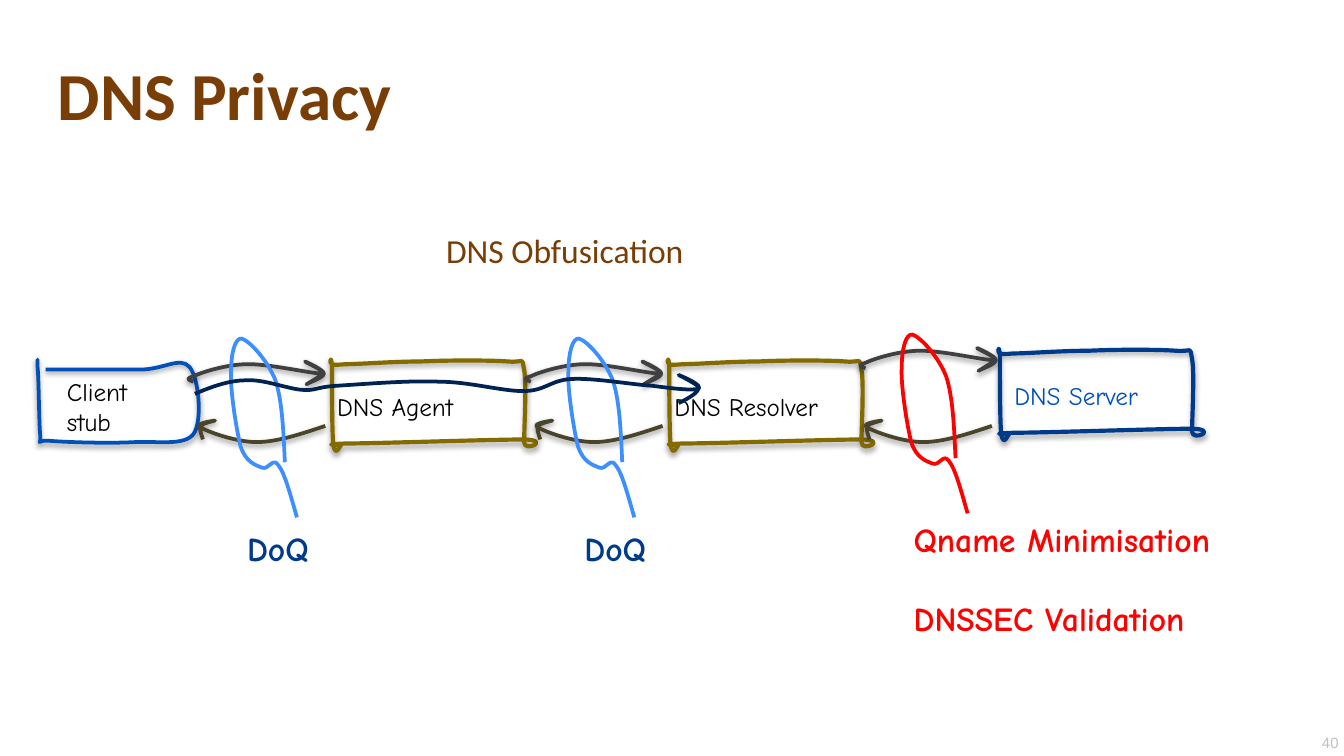
import pptx
import pptx.dml.color
import pptx.enum.text
import pptx.oxml.ns
import pptx.util
from lxml import etree

PX = 9144
COLORS = {
    "brown": "793E05", "grey": "BFBFBF", "black": "000000", "red": "FF0000",
    "blue": "004FBA", "navy": "003B8B", "sky": "3D8FFF", "midnight": "002352",
    "olive": "846B00", "request": "404040", "reply": "4A452A",
}
HAND, PLAIN, SMALL = "Comic Neue", "Calibri", "Arial"
ANCHOR = pptx.enum.text.MSO_ANCHOR
ALIGN = pptx.enum.text.PP_ALIGN

CLIENT = [
    (6, 8), (29, 8), (53, 8), (76, 8), (94, 8), (106, -2), (113, 6),
    (120, 14), (123, 46), (116, 56), (109, 65), (89, 61), (71, 62),
    (53, 63), (20, 62), (9, 61), (-3, 60), (3, 66), (2, 57),
    (1, 47), (1, 15), (0, 6), (0, -3), (0, 2), (0, 2),
]
HOST = [
    (11, 4), (22, 4), (46, 2), (67, 2), (87, 1), (119, 1), (132, 2),
    (145, 3), (142, -2), (144, 8), (146, 18), (144, 53), (144, 62),
    (144, 70), (165, 60), (143, 60), (121, 60), (33, 63), (11, 63),
    (-12, 64), (10, 64), (8, 64), (7, 64), (4, 74), (2, 64),
    (1, 54), (1, 15), (1, 5), (0, -5), (-1, 4), (1, 4),
    (3, 4), (0, 5), (11, 4),
]
REQUEST = [
    (4, 15), (1, 14), (-3, 13), (4, 11), (10, 8), (29, 2), (45, 2),
    (61, 2), (92, 9), (99, 9), (106, 9), (86, 0), (87, 0),
    (87, 0), (101, 6), (101, 9), (101, 12), (89, 16), (88, 17),
    (88, 17), (93, 14), (98, 11),
]
REPLY = [
    (94, 4), (76, 10), (58, 16), (43, 16), (27, 16), (6, 8), (1, 5),
    (-4, 2), (12, 0), (12, 0), (12, 0), (3, 2), (1, 4),
    (0, 6), (3, 14), (3, 14),
]
RING = [
    (49, 133), (44, 116), (40, 100), (35, 94), (31, 88), (28, 98), (23, 96),
    (18, 94), (11, 92), (7, 80), (4, 68), (-1, 37), (0, 24),
    (0, 11), (3, -1), (8, 0), (14, 2), (27, 16), (33, 31),
    (38, 46), (39, 69), (40, 92),
]
FLOW = [
    (0, 14), (12, 9), (25, 4), (38, 4), (51, 3), (68, 10), (79, 11),
    (91, 12), (89, 9), (106, 8), (123, 7), (158, 4), (181, 5),
    (204, 5), (228, 12), (244, 12), (261, 12), (264, 4), (280, 3),
    (296, 2), (324, 7), (340, 8), (355, 10), (371, 12), (375, 10),
    (378, 9), (360, 0), (360, 0), (360, 0), (375, 6), (375, 9),
    (375, 13), (368, 17), (360, 21),
]


def qualified(name):
    return pptx.oxml.ns.qn("a:" + name)


class Sketch:
    def __init__(self, page):
        self.page = page

    def color(self, name):
        return pptx.dml.color.RGBColor.from_string(COLORS[name])

    def text(self, left, top, width, height, lines, size, font, color, bold=False,
             inset=(10, 5), anchor=ANCHOR.TOP, align=ALIGN.LEFT, gap=0):
        box = self.page.shapes.add_textbox(left * PX, top * PX, width * PX, height * PX)
        frame = box.text_frame
        frame.word_wrap = True
        frame.vertical_anchor = anchor
        frame.margin_left = frame.margin_right = inset[0] * PX
        frame.margin_top = frame.margin_bottom = inset[1] * PX
        for index, line in enumerate(lines):
            para = frame.add_paragraph() if index else frame.paragraphs[0]
            para.alignment = align
            if index and gap:
                para.space_before = pptx.util.Pt(gap)
            span = para.add_run()
            span.text = line
            span.font.size = pptx.util.Pt(size)
            span.font.name = font
            span.font.bold = bold
            span.font.color.rgb = self.color(color)

    def stroke(self, left, top, points, color, width=2, shadow=None, closed=False):
        spots = [((left + x) * PX, (top + y) * PX) for x, y in points]
        builder = self.page.shapes.build_freeform(*spots[0], scale=1.0)
        builder.add_line_segments(spots[1:], close=closed)
        shape = builder.convert_to_shape()
        self.bend(shape)
        shape.fill.background()
        shape.line.color.rgb = self.color(color)
        shape.line.width = pptx.util.Pt(width)
        shape.shadow.inherit = False
        if shadow:
            self.shade(shape, *shadow)

    def bend(self, shape):
        segments = list(shape.element.iter(qualified("lnTo")))
        for start in range(0, len(segments), 3):
            curve = etree.Element(qualified("cubicBezTo"))
            segments[start].addprevious(curve)
            for segment in segments[start:start + 3]:
                curve.append(segment[0])
                segment.getparent().remove(segment)

    def shade(self, shape, opacity, distance):
        effects = shape.element.spPr.find(qualified("effectLst"))
        outer = etree.SubElement(
            effects, qualified("outerShdw"), blurRad=str(pptx.util.Pt(3.1)),
            dist=str(pptx.util.Pt(distance)), dir="5400000", rotWithShape="0")
        tint = etree.SubElement(outer, qualified("srgbClr"), val=COLORS["black"])
        etree.SubElement(tint, qualified("alpha"), val=str(opacity * 1000))


def main():
    deck = pptx.Presentation()
    deck.slide_width = pptx.util.Inches(10)
    deck.slide_height = deck.slide_width * 9 // 16
    sketch = Sketch(deck.slides.add_slide(deck.slide_layouts[6]))
    soft, deep = (38, 1.6), (35, 1.8)

    sketch.text(43, 23, 913, 94, ["DNS Privacy"], 36, PLAIN, "brown", True,
                inset=(0, 0), anchor=ANCHOR.MIDDLE)
    sketch.text(965, 541, 31, 18, ["40"], 8, SMALL, "grey",
                inset=(0, 0), anchor=ANCHOR.BOTTOM, align=ALIGN.RIGHT)

    sketch.stroke(28, 267, CLIENT, "blue", shadow=soft)
    sketch.text(40, 275, 81, 56, ["Client", "stub"], 13.5, HAND, "black")

    hosts = [
        (246, 267, "olive", 241, 132, "DNS Agent", "black"),
        (497, 267, "olive", 492, 161, "DNS Resolver", "black"),
        (743, 259, "navy", 745, 144, "DNS Server", "blue"),
    ]
    for left, top, edge, label_left, label_width, name, ink in hosts:
        sketch.stroke(left, top, HOST, edge, 2.25, deep, closed=True)
        sketch.text(label_left, top + 19, label_width, 33, [name], 13.5, HAND, ink)

    for left, top in [(140, 269), (391, 269), (640, 259)]:
        sketch.stroke(left, top, REQUEST, "request", shadow=soft)
    for left in (148, 399, 644):
        sketch.stroke(left, 313, REPLY, "reply", shadow=soft)
    for left, top, color in [(172, 252, "sky"), (423, 252, "sky"), (671, 249, "red")]:
        sketch.stroke(left, top, RING, color)

    for left in (174, 425):
        sketch.text(left, 388, 73, 40, ["DoQ"], 18, HAND, "navy", True)
    sketch.text(670, 381, 286, 101, ["Qname Minimisation", "DNSSEC Validation"],
                18, HAND, "red", True, gap=21)

    sketch.stroke(145, 279, FLOW, "midnight")
    sketch.text(322, 166, 261, 40, ["DNS Obfusication"], 18, PLAIN, "brown")
    deck.save("out.pptx")


if __name__ == "__main__":
    main()
